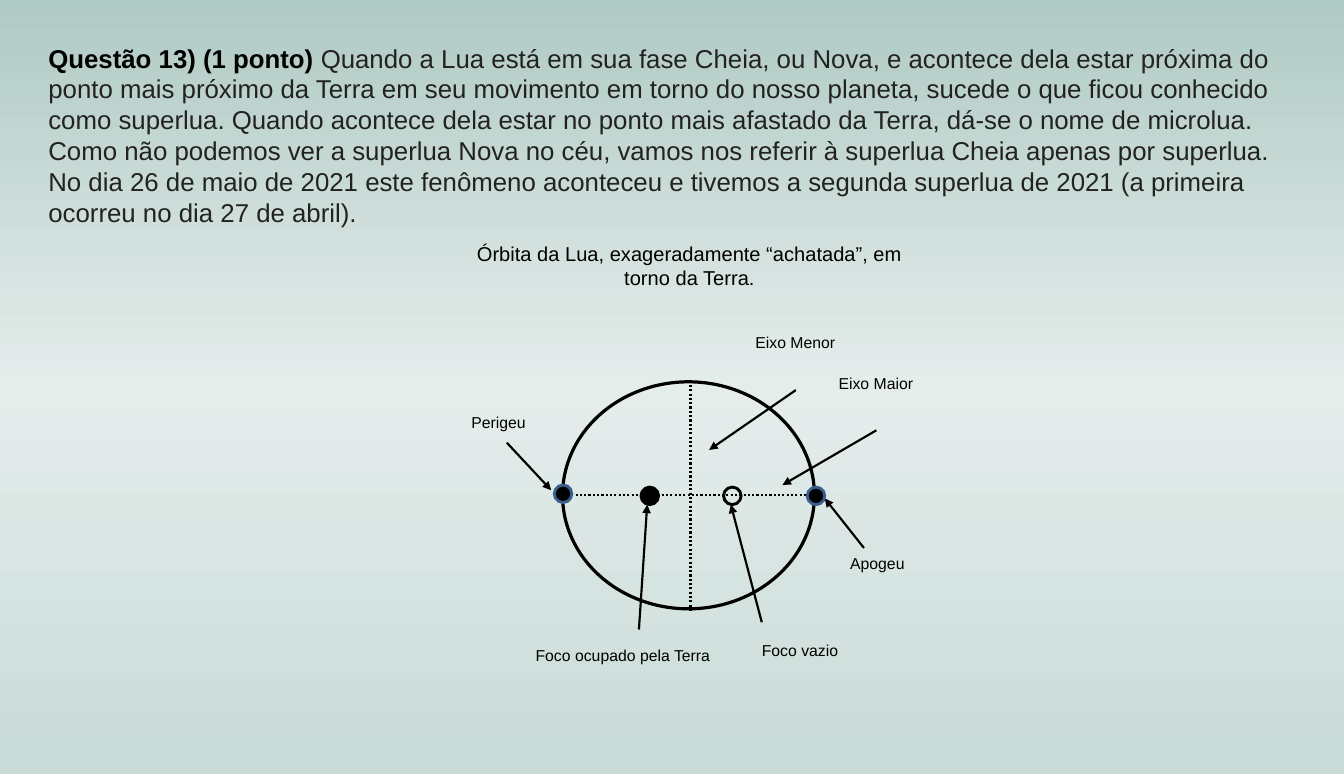
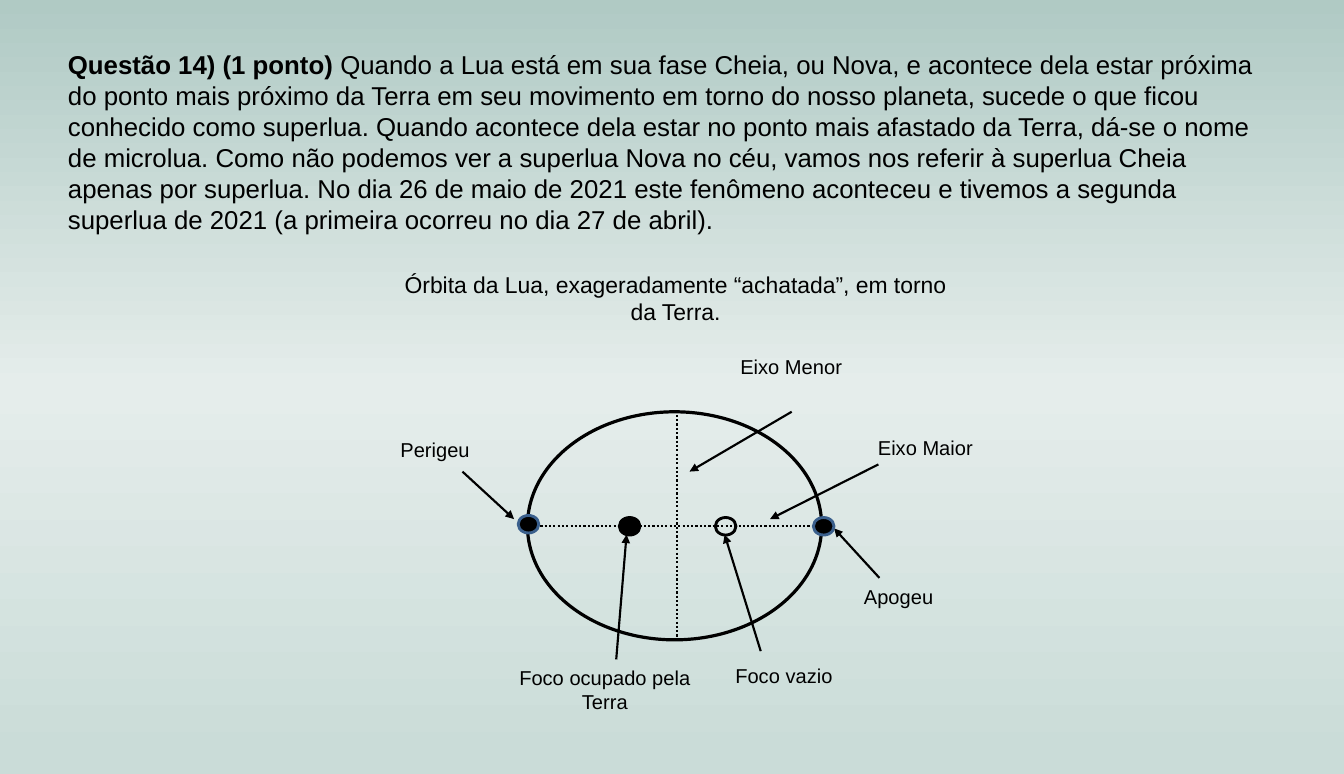
import pptx
import pptx.dml.color
import pptx.enum.dml
import pptx.enum.shapes
import pptx.enum.text
import pptx.oxml
import pptx.oxml.ns
import pptx.util

Inches = pptx.util.Inches
COLORS = {
    "ink": "000000",
    "statement": "222222",
    "moon_edge": "3A5F8C",
    "sky_top": "B0CAC4",
    "sky_middle": "E5EDEB",
    "sky_bottom": "CADCD8",
}
SKY_STOPS = [(0, "sky_top"), (50, "sky_middle"), (98, "sky_bottom")]
FONT = "Arial"
STATEMENT = (
    "Quando a Lua está em sua fase Cheia, ou Nova, e acontece dela estar próxima "
    "do ponto mais próximo da Terra em seu movimento em torno do nosso planeta, "
    "sucede o que ficou conhecido como superlua. Quando acontece dela estar no "
    "ponto mais afastado da Terra, dá-se o nome de microlua. Como não podemos ver "
    "a superlua Nova no céu, vamos nos referir à superlua Cheia apenas por "
    "superlua. No dia 26 de maio de 2021 este fenômeno aconteceu e tivemos a "
    "segunda superlua de 2021 (a primeira ocorreu no dia 27 de abril)."
)
CAPTION = "Órbita da Lua, exageradamente “achatada”, em torno da Terra."

QUESTIONS = [
    {
        "number": 13,
        "statement_box": (0.37, 0.36, 12.05, 1.92),
        "statement_color": "statement",
        "caption_box": (4.3, 2.29, 4.76, 0.98),
        "caption_size": 14,
        "label_size": 11,
        "orbit": (5.45, 3.7, 2.44, 2.2),
        "body_width": 0.17,
        "bodies": {"perigee": 5.37, "earth": 6.21, "empty": 7.01, "apogee": 7.82},
        "labels": [
            ("Eixo Menor", (6.7, 3.18, 2.01, 0.6), (7.71, 3.78), (6.87, 4.36)),
            ("Eixo Maior", (7.54, 3.57, 1.89, 0.6), (8.49, 4.17), (7.58, 4.7)),
            ("Foco ocupado pela Terra", (5.07, 6.21, 1.93, 1.23), (6.19, 6.1), (6.27, 4.89)),
            ("Foco vazio", (6.74, 6.16, 2.02, 0.76), (7.38, 6.03), (7.08, 4.89)),
            ("Perigeu", (4.08, 3.95, 1.5, 0.6), (4.91, 4.29), (5.34, 4.75)),
            ("Apogeu", (7.75, 5.32, 1.5, 0.6), (8.37, 5.31), (7.99, 4.83)),
        ],
    },
    {
        "number": 14,
        "statement_box": (0.56, 0.42, 11.9, 1.92),
        "statement_color": "ink",
        "caption_box": (3.76, 2.57, 5.57, 0.98),
        "caption_size": 16,
        "label_size": 14,
        "orbit": (5.11, 3.99, 2.85, 2.21),
        "body_width": 0.2,
        "bodies": {"perigee": 5.02, "earth": 6, "empty": 6.93, "apogee": 7.88},
        "labels": [
            ("Eixo Menor", (6.49, 3.39, 2.35, 0.6), (7.67, 3.99), (6.68, 4.57)),
            ("Eixo Maior", (7.86, 4.17, 2.21, 0.6), (8.51, 4.5), (7.46, 5.03)),
            ("Foco ocupado pela Terra", (4.73, 6.4, 2.26, 1.23), (5.97, 6.39), (6.07, 5.18)),
            ("Foco vazio", (6.41, 6.38, 2.37, 0.76), (7.37, 6.31), (7.02, 5.18)),
            ("Perigeu", (3.34, 4.19, 1.75, 0.6), (4.48, 4.57), (4.98, 5.03)),
            ("Apogeu", (7.83, 5.61, 1.75, 0.6), (8.52, 5.6), (8.08, 5.12)),
        ],
    },
]


def rgb(color):
    return pptx.dml.color.RGBColor.from_string(COLORS[color])


def inches(lengths):
    return [Inches(length) for length in lengths]


def paint_sky(master):
    master.background.fill.solid()
    stops = "".join(
        f'<a:gs pos="{percent * 1000}"><a:srgbClr val="{COLORS[color]}"/></a:gs>'
        for percent, color in SKY_STOPS
    )
    gradient = pptx.oxml.parse_xml(
        f'<a:gradFill {pptx.oxml.ns.nsdecls("a")} rotWithShape="1">'
        f'<a:gsLst>{stops}</a:gsLst><a:lin ang="5400000" scaled="0"/></a:gradFill>'
    )
    background = next(master.element.iter(pptx.oxml.ns.qn("p:bgPr")))
    background.replace(background[0], gradient)


def add_run(paragraph, text, size=18, color="ink", bold=False):
    run = paragraph.add_run()
    run.text = text
    run.font.name = FONT
    run.font.size = pptx.util.Pt(size)
    run.font.bold = bold
    run.font.color.rgb = rgb(color)


def add_text_box(shapes, box, runs, centered=False):
    frame = shapes.add_textbox(*inches(box)).text_frame
    frame.word_wrap = True
    paragraph = frame.paragraphs[0]
    if centered:
        paragraph.alignment = pptx.enum.text.PP_ALIGN.CENTER
    for text, style in runs:
        add_run(paragraph, text, **style)


def add_ellipse(shapes, box, fill=None, edge="ink", width=2):
    ellipse = shapes.add_shape(pptx.enum.shapes.MSO_SHAPE.OVAL, *inches(box))
    ellipse.shadow.inherit = False
    if fill:
        ellipse.fill.solid()
        ellipse.fill.fore_color.rgb = rgb(fill)
    else:
        ellipse.fill.background()
    ellipse.line.color.rgb = rgb(edge)
    ellipse.line.width = pptx.util.Pt(width)


def add_line(shapes, start, end, dotted=False, arrow=False):
    connector = shapes.add_connector(
        pptx.enum.shapes.MSO_CONNECTOR.STRAIGHT, *inches(start + end)
    )
    connector.line.color.rgb = rgb("ink")
    connector.line.width = pptx.util.Pt(1.5)
    if dotted:
        connector.line.dash_style = pptx.enum.dml.MSO_LINE.ROUND_DOT
    if arrow:
        outline = connector.line._get_or_add_ln()
        outline.append(pptx.oxml.parse_xml(
            f'<a:tailEnd {pptx.oxml.ns.nsdecls("a")} type="triangle"/>'
        ))
    connector.element.spPr.append(
        pptx.oxml.parse_xml(f'<a:effectLst {pptx.oxml.ns.nsdecls("a")}/>')
    )


def add_orbit(shapes, orbit):
    left, top, width, height = orbit
    minor_x = left + width / 2 + 0.02
    major_y = top + height / 2
    add_ellipse(shapes, orbit, width=2.25)
    add_line(shapes, (minor_x, top + 0.03), (minor_x, top + height + 0.03), dotted=True)
    add_line(shapes, (left, major_y), (left + width, major_y), dotted=True)
    return major_y


def add_diagram(slide, question):
    shapes = slide.shapes.add_group_shape().shapes
    major_y = add_orbit(shapes, question["orbit"])
    caption_style = {"size": question["caption_size"]}
    add_text_box(shapes, question["caption_box"], [(CAPTION, caption_style)], centered=True)
    for text, box, start, end in question["labels"]:
        add_text_box(shapes, box, [(text, {"size": question["label_size"]})], centered=True)
        add_line(shapes, start, end, arrow=True)
    for body, left in question["bodies"].items():
        top = major_y - (0.1 if body == "perigee" else 0.08)
        add_ellipse(
            shapes,
            (left, top, question["body_width"], 0.17),
            fill=None if body == "empty" else "ink",
            edge="moon_edge" if body in ("perigee", "apogee") else "ink",
        )


def add_question(deck, question):
    slide = deck.slides.add_slide(deck.slide_layouts.get_by_name("Blank"))
    heading = f"Questão {question['number']}) (1 ponto) "
    add_text_box(slide.shapes, question["statement_box"], [
        (heading, {"bold": True}),
        (STATEMENT, {"color": question["statement_color"]}),
    ])
    add_diagram(slide, question)


def main():
    deck = pptx.Presentation()
    deck.slide_width, deck.slide_height = Inches(13.02), Inches(7.5)
    paint_sky(deck.slide_master)
    for question in QUESTIONS:
        add_question(deck, question)
    deck.save("out.pptx")


if __name__ == "__main__":
    main()
